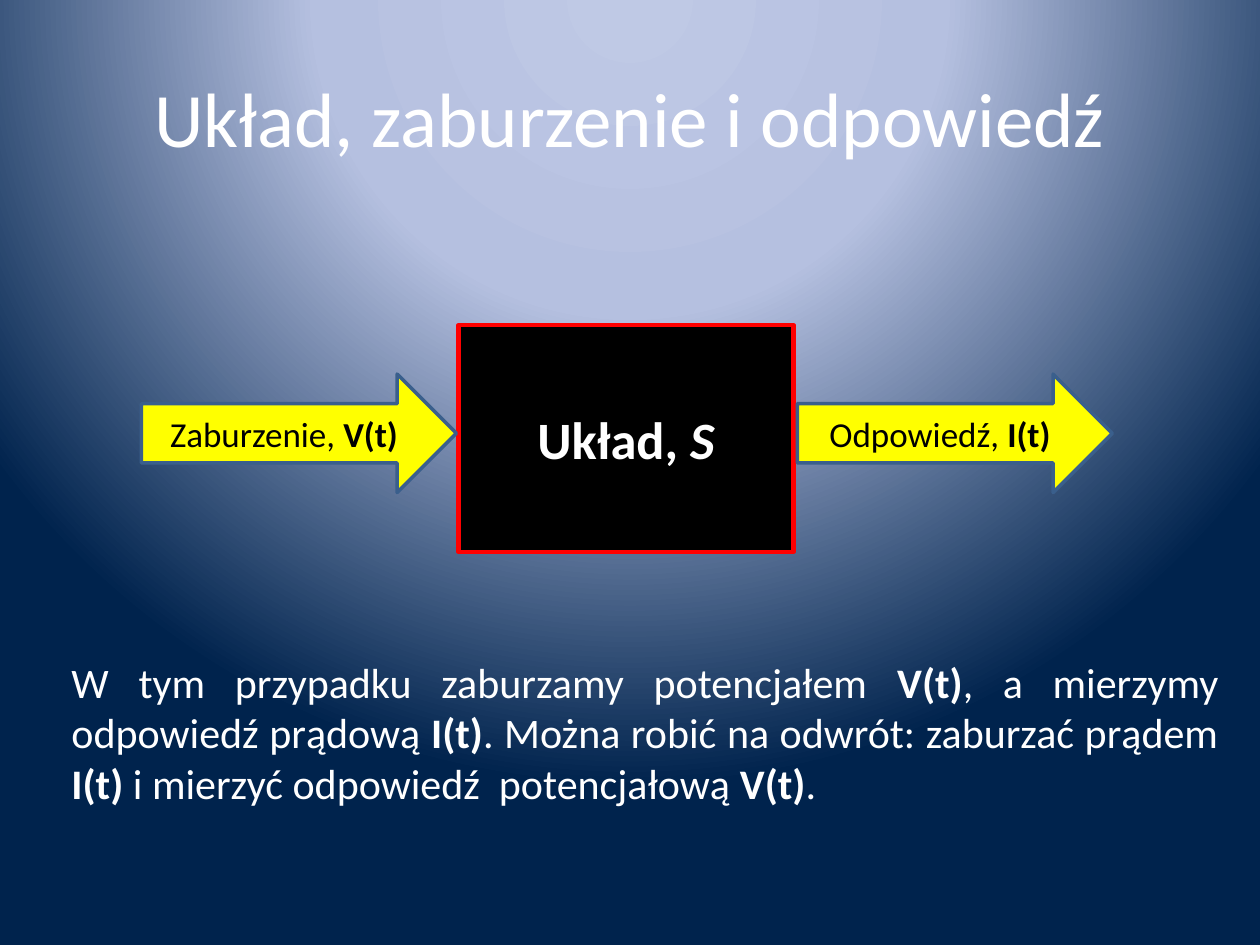
import dataclasses
import typing

import lxml.etree
import pptx
import pptx.dml.color
import pptx.enum.shapes
import pptx.enum.text
import pptx.oxml
import pptx.oxml.ns
import pptx.util

Pt = pptx.util.Pt
Align = pptx.enum.text.PP_ALIGN
Anchor = pptx.enum.text.MSO_ANCHOR
Kind = pptx.enum.shapes.MSO_SHAPE


class Run(typing.NamedTuple):
    text: str
    bold: bool = False
    slant: bool = False


@dataclasses.dataclass
class Label:
    runs: list[Run]
    size: float
    color: str = "FFFFFF"
    align: Align = Align.CENTER
    anchor: Anchor = Anchor.MIDDLE


@dataclasses.dataclass
class Block:
    kind: Kind
    left: float
    top: float
    width: float
    height: float
    fill: str
    line: str
    weight: float
    label: Label


def color(code: str) -> pptx.dml.color.RGBColor:
    return pptx.dml.color.RGBColor.from_string(code)


def write(frame, label: Label) -> None:
    frame.word_wrap = True
    frame.vertical_anchor = label.anchor
    para = frame.paragraphs[0]
    para.alignment = label.align
    para.font.name = "Calibri"
    para.font.size = Pt(label.size)
    para.font.color.rgb = color(label.color)
    for part in label.runs:
        run = para.add_run()
        run.text = part.text
        if part.bold:
            run.font.bold = True
        if part.slant:
            run.font.italic = True


def add_text(slide, left: float, top: float, width: float, height: float,
             label: Label) -> None:
    box = slide.shapes.add_textbox(Pt(left), Pt(top), Pt(width), Pt(height))
    write(box.text_frame, label)


def add_block(slide, block: Block) -> None:
    shape = slide.shapes.add_shape(
        block.kind, Pt(block.left), Pt(block.top),
        Pt(block.width), Pt(block.height))
    shape.shadow.inherit = False
    shape.fill.solid()
    shape.fill.fore_color.rgb = color(block.fill)
    shape.line.color.rgb = color(block.line)
    shape.line.width = Pt(block.weight)
    write(shape.text_frame, block.label)


def paint(slide, stops: list[tuple[int, str]]) -> None:
    slide.background.fill.gradient()
    old = slide.element.xpath(".//p:bgPr/a:gradFill")[0]
    marks = "".join(
        f'<a:gs pos="{spot * 1000}"><a:srgbClr val="{code}"/></a:gs>'
        for spot, code in stops)
    grad = pptx.oxml.parse_xml(
        f'<a:gradFill {pptx.oxml.ns.nsdecls("a")} rotWithShape="1">'
        f'<a:gsLst>{marks}</a:gsLst><a:path path="circle">'
        '<a:fillToRect l="50000" t="-80000" r="50000" b="180000"/>'
        '</a:path></a:gradFill>')
    old.getparent().replace(old, grad)


def arrow(left: float, word: str, sign: str) -> Block:
    label = Label([Run(word), Run(sign, bold=True)], 20, "000000")
    return Block(Kind.RIGHT_ARROW, left, 213.8, 180, 67.7,
                 "FFFF00", "3A5F8C", 2, label)


def main() -> None:
    deck = pptx.Presentation()
    deck.slide_width, deck.slide_height = Pt(720), Pt(540)
    slide = deck.slides.add_slide(deck.slide_layouts[6])
    paint(slide, [(0, "BFC9E5"), (40, "B5C0E0"), (100, "00234D")])

    add_text(slide, 36, 21.6, 648, 90,
             Label([Run("Układ, zaburzenie i odpowiedź")], 44))

    system = Label([Run("Układ, ", bold=True),
                    Run("S", bold=True, slant=True)], 30)
    blocks = [
        Block(Kind.RECTANGLE, 262, 185.8, 191.5, 129.6,
              "000000", "FF0000", 2.5, system),
        arrow(80.8, "Zaburzenie, ", "V(t)"),
        arrow(455.6, "Odpowiedź, ", "I(t)"),
    ]
    for block in blocks:
        add_block(slide, block)

    volt, amp = Run("V(t)", bold=True), Run("I(t)", bold=True)
    note = [
        Run("W tym przypadku zaburzamy potencjałem "), volt,
        Run(", a mierzymy odpowiedź prądową "), amp,
        Run(". Można robić na odwrót: zaburzać prądem "), amp,
        Run(" i mierzyć odpowiedź  potencjałową "), volt, Run("."),
    ]
    add_text(slide, 33.8, 371.5, 669.6, 94.3,
             Label(note, 24, align=Align.JUSTIFY, anchor=Anchor.TOP))
    deck.save("out.pptx")


if __name__ == "__main__":
    main()
